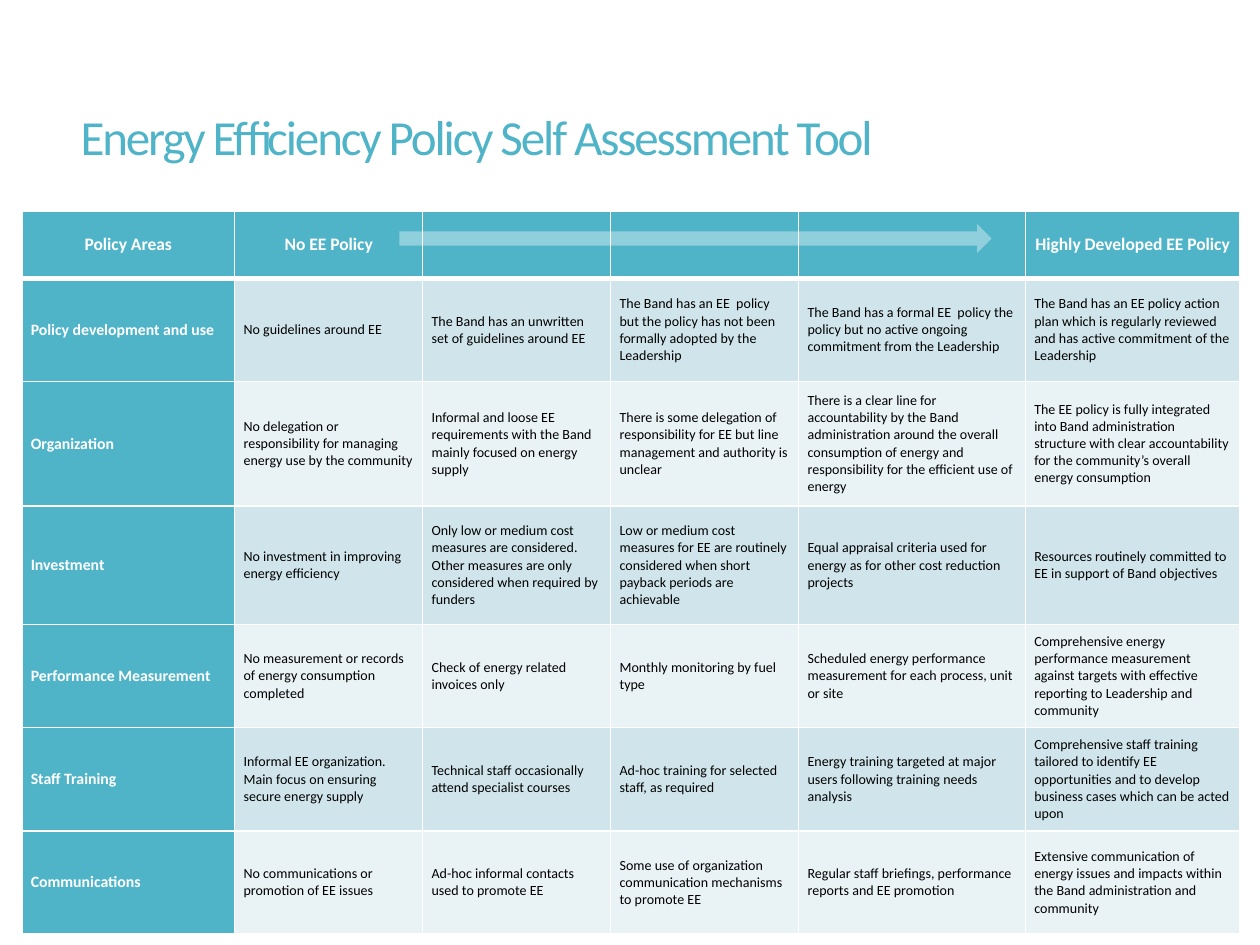
"""Build the energy efficiency policy self assessment slide."""
from dataclasses import dataclass

from lxml.etree import SubElement
from pptx import Presentation
from pptx.dml.color import RGBColor
from pptx.enum.shapes import MSO_SHAPE
from pptx.enum.text import MSO_ANCHOR, PP_ALIGN
from pptx.oxml.ns import qn
from pptx.slide import Slide
from pptx.table import Table, _Cell
from pptx.util import Cm, Pt

COLORS = {
    "teal": "50B4C8",
    "band": "D0E5EB",
    "pale": "E9F2F5",
    "white": "FFFFFF",
    "black": "000000",
}
FONT = "Calibri"
COLUMN_WIDTHS = (4.29, 3.79, 3.79, 3.79, 4.57, 4.32)
HEADER_HEIGHT = 1.36
CELL_FORMAT = {
    "vertical_anchor": MSO_ANCHOR.MIDDLE,
    "margin_left": Cm(0.18),
    "margin_right": Cm(0.18),
    "margin_top": 0,
    "margin_bottom": 0,
}
TITLE_PLACE = {"left": Cm(1.37), "top": Cm(1.4), "width": Cm(22.45), "height": Cm(2.84)}


@dataclass(frozen=True)
class CellStyle:
    """Look of one kind of table cell."""

    size: int
    color: str
    bold: bool
    align: PP_ALIGN = PP_ALIGN.LEFT


@dataclass(frozen=True)
class PolicyArea:
    """One policy area with its five levels, from none to highly developed."""

    name: str
    height: float
    levels: tuple[str, ...]


HEADER = CellStyle(10, "white", True, PP_ALIGN.CENTER)
AREA_NAME = CellStyle(9, "white", True)
LEVEL = CellStyle(8, "black", False)

HEADINGS = ("Policy Areas", "No EE Policy", "", "", "", "Highly Developed EE Policy")
AREAS = (
    PolicyArea("Policy development and use", 2.08, (
        "No guidelines around EE",
        "The Band has an unwritten set of guidelines around EE",
        "The Band has an EE  policy but the policy has not been formally adopted by the Leadership",
        "The Band has a formal EE  policy the policy but no active ongoing commitment from the Leadership",
        "The Band has an EE policy action plan which is regularly reviewed and has active commitment of the Leadership",
    )),
    PolicyArea("Organization", 2.51, (
        "No delegation or responsibility for managing energy use by the community",
        "Informal and loose EE requirements with the Band mainly focused on energy supply",
        "There is some delegation of responsibility for EE but line management and authority is unclear",
        "There is a clear line for accountability by the Band administration around the overall "
        "consumption of energy and responsibility for the efficient use of energy",
        "The EE policy is fully integrated into Band administration structure with clear "
        "accountability for the community’s overall energy consumption",
    )),
    PolicyArea("Investment", 2.39, (
        "No investment in improving energy efficiency",
        "Only low or medium cost measures are considered. Other measures are only considered "
        "when required by funders",
        "Low or medium cost measures for EE are routinely considered when short payback periods are achievable",
        "Equal appraisal criteria used for energy as for other cost reduction projects",
        "Resources routinely committed to EE in support of Band objectives",
    )),
    PolicyArea("Performance Measurement", 2.08, (
        "No measurement or records of energy consumption completed",
        "Check of energy related invoices only",
        "Monthly monitoring by fuel type",
        "Scheduled energy performance measurement for each process, unit or site",
        "Comprehensive energy performance measurement against targets with effective reporting "
        "to Leadership and community",
    )),
    PolicyArea("Staff Training", 2.08, (
        "Informal EE organization. Main focus on ensuring secure energy supply",
        "Technical staff occasionally attend specialist courses",
        "Ad-hoc training for selected staff, as required",
        "Energy training targeted at major users following training needs analysis",
        "Comprehensive staff training tailored to identify EE opportunities and to develop "
        "business cases which can be acted upon",
    )),
    PolicyArea("Communications", 2.08, (
        "No communications or promotion of EE issues",
        "Ad-hoc informal contacts used to promote EE",
        "Some use of organization communication mechanisms to promote EE",
        "Regular staff briefings, performance reports and EE promotion",
        "Extensive communication of energy issues and impacts within the Band administration and community",
    )),
)


def rgb(name: str) -> RGBColor:
    return RGBColor.from_string(COLORS[name])


def apply(target: object, values: dict) -> None:
    for attribute, value in values.items():
        setattr(target, attribute, value)


def add_borders(cell: _Cell, top: int, bottom: int) -> None:
    properties = cell._tc.get_or_add_tcPr()
    for side, points in {"lnL": 1, "lnR": 1, "lnT": top, "lnB": bottom}.items():
        border = SubElement(properties, qn(f"a:{side}"), w=str(Pt(points)))
        paint = SubElement(border, qn("a:solidFill"))
        SubElement(paint, qn("a:srgbClr"), val=COLORS["white"])


def fill_cell(cell: _Cell, wording: str, style: CellStyle, background: str) -> None:
    apply(cell, CELL_FORMAT)
    cell.fill.solid()
    cell.fill.fore_color.rgb = rgb(background)
    if not wording:
        return
    paragraph = cell.text_frame.paragraphs[0]
    apply(paragraph, {"alignment": style.align, "space_before": Pt(10), "space_after": Pt(5)})
    run = paragraph.add_run()
    run.text = wording
    apply(run.font, {"name": FONT, "size": Pt(style.size), "bold": style.bold})
    run.font.color.rgb = rgb(style.color)


def fill_row(table: Table, row: int, wordings: tuple[str, ...]) -> None:
    shade = "band" if row % 2 else "pale"
    for column, wording in enumerate(wordings):
        cell = table.cell(row, column)
        add_borders(cell, top=3 if row == 1 else 1, bottom=3 if row == 0 else 1)
        if row == 0:
            fill_cell(cell, wording, HEADER, "teal")
        elif column == 0:
            fill_cell(cell, wording, AREA_NAME, "teal")
        else:
            fill_cell(cell, wording, LEVEL, shade)


def add_assessment(slide: Slide) -> None:
    heights = (HEADER_HEIGHT, *(area.height for area in AREAS))
    table = slide.shapes.add_table(
        len(heights), len(COLUMN_WIDTHS), Cm(0.44), Cm(4.25),
        Cm(sum(COLUMN_WIDTHS)), Cm(sum(heights)),
    ).table
    for column, width in zip(table.columns, COLUMN_WIDTHS):
        column.width = Cm(width)
    for row, height in zip(table.rows, heights):
        row.height = Cm(height)
    fill_row(table, 0, HEADINGS)
    for row, area in enumerate(AREAS, start=1):
        fill_row(table, row, (area.name, *area.levels))


def add_title(slide: Slide, wording: str) -> None:
    title = slide.shapes.title
    apply(title, TITLE_PLACE)
    title.text_frame.vertical_anchor = MSO_ANCHOR.MIDDLE
    paragraph = title.text_frame.paragraphs[0]
    apply(paragraph, {"alignment": PP_ALIGN.LEFT, "line_spacing": 0.9})
    run = paragraph.add_run()
    run.text = wording
    apply(run.font, {"name": FONT, "size": Pt(28)})
    run.font.color.rgb = rgb("teal")
    run.font._element.set("spc", "-120")


def add_progress_arrow(slide: Slide) -> None:
    arrow = slide.shapes.add_shape(
        MSO_SHAPE.RIGHT_ARROW, Cm(8.05), Cm(4.52), Cm(11.94), Cm(0.58)
    )
    arrow.shadow.inherit = False
    arrow.line.fill.background()
    arrow.fill.solid()
    arrow.fill.fore_color.rgb = rgb("white")
    tint = arrow._element.spPr.find(qn("a:solidFill")).find(qn("a:srgbClr"))
    SubElement(tint, qn("a:alpha"), val="37000")


def main() -> None:
    deck = Presentation()
    apply(deck, {"slide_width": Cm(25.4), "slide_height": Cm(19.05)})
    slide = deck.slides.add_slide(deck.slide_layouts.get_by_name("Title Only"))
    add_title(slide, "Energy Efficiency Policy Self Assessment Tool")
    add_assessment(slide)
    add_progress_arrow(slide)
    deck.save("out.pptx")


if __name__ == "__main__":
    main()
